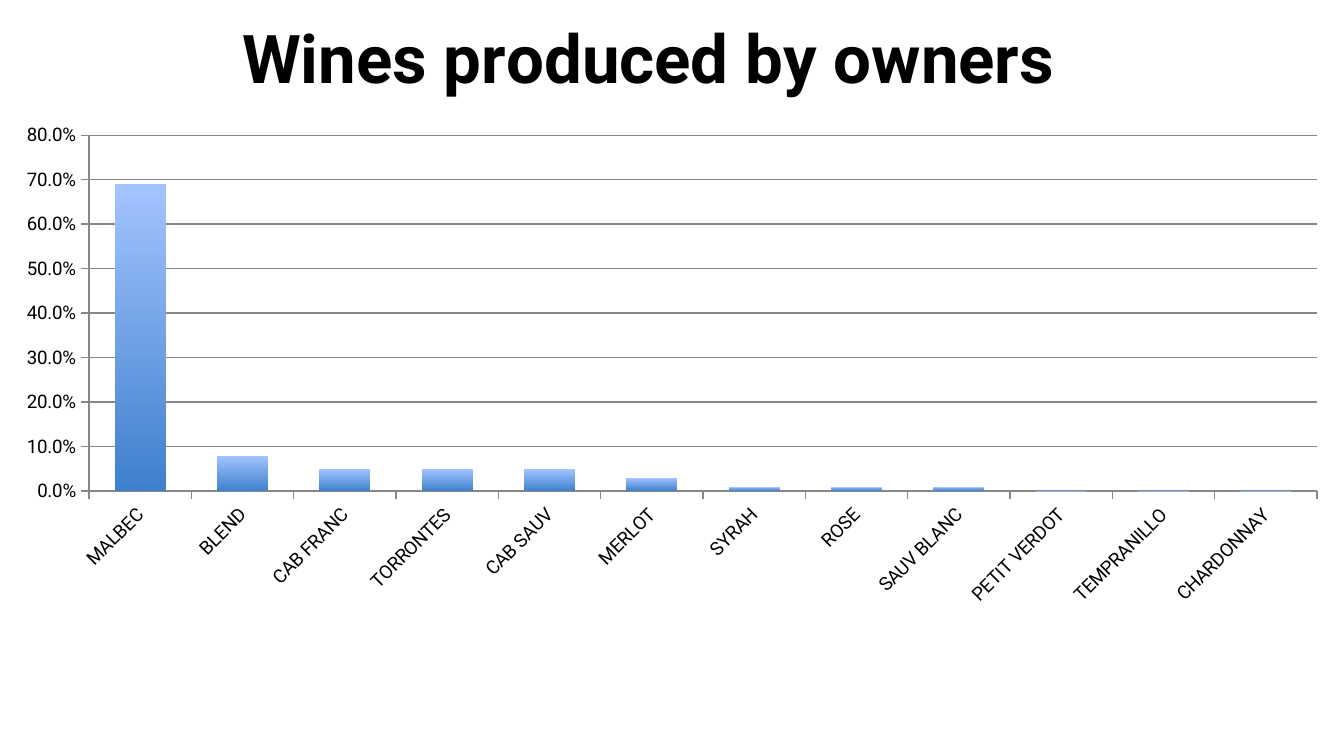
from lxml import etree
from pptx import Presentation
from pptx.chart.data import CategoryChartData
from pptx.dml.color import RGBColor
from pptx.enum import chart as kinds
from pptx.oxml import ns
from pptx.util import Pt

COLOURS = {
    "text": "000000",
    "rule": "878787",
    "bar_base": "3F80CD",
    "bar_top": "A3C4FF",
}
FONT = "Roboto"
WINES = {
    "MALBEC": 0.69,
    "BLEND": 0.08,
    "CAB FRANC": 0.05,
    "TORRONTES": 0.05,
    "CAB SAUV": 0.05,
    "MERLOT": 0.03,
    "SYRAH": 0.01,
    "ROSE": 0.01,
    "SAUV BLANC": 0.01,
    "PETIT VERDOT": 0,
    "TEMPRANILLO": 0,
    "CHARDONNAY": 0,
}


def colour(name):
    return RGBColor.from_string(COLOURS[name])


def style_font(font, size, bold=False):
    font.name = FONT
    font.size = Pt(size)
    font.bold = bold
    font.color.rgb = colour("text")


def style_line(line):
    line.color.rgb = colour("rule")
    line.width = Pt(0.75)


def set_layout(parent, index, settings):
    for layout in parent.findall(ns.qn("c:layout")):
        parent.remove(layout)
    layout = etree.Element(ns.qn("c:layout"))
    manual = etree.SubElement(layout, ns.qn("c:manualLayout"))
    for tag, value in settings.items():
        etree.SubElement(manual, ns.qn("c:" + tag)).set("val", str(value))
    parent.insert(index, layout)


def set_title(chart, title, width, height):
    chart.has_title = True
    para = chart.chart_title.text_frame.paragraphs[0]
    para.text = title
    style_font(para.font, 36, True)
    chart.chart_title.include_in_layout = False
    place = {"xMode": "edge", "yMode": "edge", "x": 123.2 / width, "y": 0 / height}
    set_layout(chart.chart_title._element, 1, place)


def set_axes(chart):
    for axis in (chart.category_axis, chart.value_axis):
        axis.major_tick_mark = kinds.XL_TICK_MARK.OUTSIDE
        axis.minor_tick_mark = kinds.XL_TICK_MARK.NONE
        style_font(axis.tick_labels.font, 10)
        style_line(axis.format.line)
    chart.category_axis.has_major_gridlines = False
    labels = chart.category_axis._element.find(ns.qn("c:txPr"))
    labels.find(ns.qn("a:bodyPr")).set("rot", "-2700000")
    values = chart.value_axis
    values.minimum_scale, values.maximum_scale = 0, 0.8
    values.major_unit = 0.1
    values.has_major_gridlines = True
    style_line(values.major_gridlines.format.line)
    values.tick_labels.number_format = "0.0%"
    values.tick_labels.number_format_is_linked = False


def set_bars(chart):
    plot = chart.plots[0]
    plot.gap_width = 100
    plot.vary_by_categories = False
    fill = plot.series[0].format.fill
    fill.gradient()
    fill.gradient_angle = 90
    for stop, name in zip(fill.gradient_stops, ("bar_base", "bar_top")):
        stop.color.rgb = colour(name)


def set_plot_area(chart, width, height):
    area = chart._chartSpace.find(".//" + ns.qn("c:plotArea"))
    place = {
        "layoutTarget": "inner", "xMode": "edge", "yMode": "edge",
        "x": 47.7 / width, "y": 72.5 / height,
        "w": 657.9 / width, "h": 190.7 / height,
    }
    set_layout(area, 0, place)


def add_wine_chart(page, left, top, width, height):
    data = CategoryChartData(number_format="0.0%")
    data.categories = list(WINES)
    data.add_series("Series 1", list(WINES.values()))
    chart = page.shapes.add_chart(
        kinds.XL_CHART_TYPE.COLUMN_CLUSTERED,
        Pt(left), Pt(top), Pt(width), Pt(height), data,
    ).chart
    chart.has_legend = False
    style_font(chart.font, 10)
    set_title(chart, "Wines produced by owners", width, height)
    set_axes(chart)
    set_bars(chart)
    set_plot_area(chart, width, height)


def main():
    deck = Presentation()
    deck.slide_width, deck.slide_height = Pt(720), Pt(405)
    page = deck.slides.add_slide(deck.slide_layouts[6])
    add_wine_chart(page, 0, 0, 720, 331.2)
    deck.save("out.pptx")


if __name__ == "__main__":
    main()
